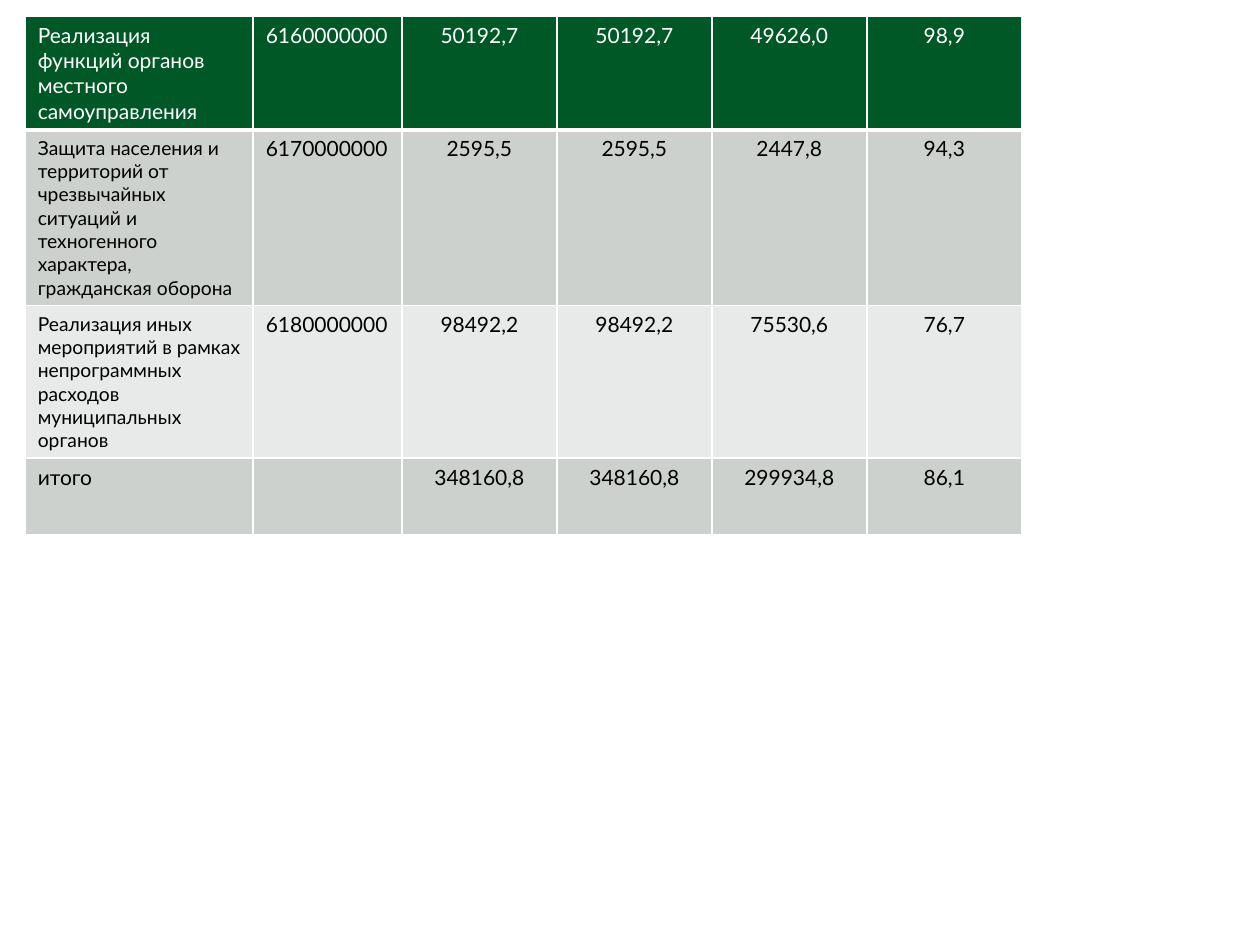
from lxml.etree import SubElement
from pptx import Presentation
from pptx.dml.color import RGBColor
from pptx.enum.text import PP_ALIGN
from pptx.oxml.ns import qn
from pptx.util import Inches, Pt

FONT = "Lato"
WHITE, BLACK = "FFFFFF", "000000"
GREEN, GREY, LIGHT_GREY = "005827", "CCD1CD", "E7EAE8"

COLUMN_WIDTHS = [1.81, 1.18] + [1.23] * 4
ROW_HEIGHT = 0.61

# fill, text colour, size of the first column, cell texts
ROWS = [
    (GREEN, WHITE, 12,
     ["Реализация функций органов местного самоуправления",
      "6160000000", "50192,7", "50192,7", "49626,0", "98,9"]),
    (GREY, BLACK, 11,
     ["Защита населения и территорий от чрезвычайных ситуаций и "
      "техногенного характера, гражданская оборона",
      "6170000000", "2595,5", "2595,5", "2447,8", "94,3"]),
    (LIGHT_GREY, BLACK, 11,
     ["Реализация иных мероприятий в рамках непрограммных расходов "
      "муниципальных органов",
      "6180000000", "98492,2", "98492,2", "75530,6", "76,7"]),
    (GREY, BLACK, 12,
     ["итого", "", "348160,8", "348160,8", "299934,8", "86,1"]),
]


def color(value):
    return RGBColor.from_string(value)


def set_borders(cell, widths):
    """Draw white borders; widths maps the sides L, R, T, B to points."""
    properties = cell._tc.get_or_add_tcPr()
    for side, width in widths.items():
        line = SubElement(properties, qn(f"a:ln{side}"), w=str(Pt(width)))
        fill = SubElement(line, qn("a:solidFill"))
        SubElement(fill, qn("a:srgbClr"), val=WHITE)


def fill_cell(cell, text, fill, text_color, size, centered):
    cell.fill.solid()
    cell.fill.fore_color.rgb = color(fill)
    cell.text = text
    paragraph = cell.text_frame.paragraphs[0]
    paragraph.alignment = PP_ALIGN.CENTER if centered else PP_ALIGN.LEFT
    paragraph.font.name = FONT
    paragraph.font.size = Pt(size)
    paragraph.font.color.rgb = color(text_color)


def add_budget_table(slide):
    frame = slide.shapes.add_table(
        len(ROWS), len(COLUMN_WIDTHS), Inches(0.2), Inches(0.13),
        Inches(sum(COLUMN_WIDTHS)), Inches(ROW_HEIGHT * len(ROWS)))
    table = frame.table
    for column, width in zip(table.columns, COLUMN_WIDTHS):
        column.width = Inches(width)
    for row_index, (fill, text_color, name_size, texts) in enumerate(ROWS):
        table.rows[row_index].height = Inches(ROW_HEIGHT)
        borders = {"L": 1, "R": 1,
                   "T": 3 if row_index == 1 else 1,
                   "B": 3 if row_index == 0 else 1}
        for column_index, text in enumerate(texts):
            cell = table.cell(row_index, column_index)
            set_borders(cell, borders)
            size = name_size if column_index == 0 else 12
            fill_cell(cell, text, fill, text_color, size, column_index > 1)


def main():
    presentation = Presentation()
    presentation.slide_width = Inches(10)
    presentation.slide_height = Inches(7.5)
    slide = presentation.slides.add_slide(presentation.slide_layouts[6])
    add_budget_table(slide)
    presentation.save("out.pptx")


if __name__ == "__main__":
    main()
